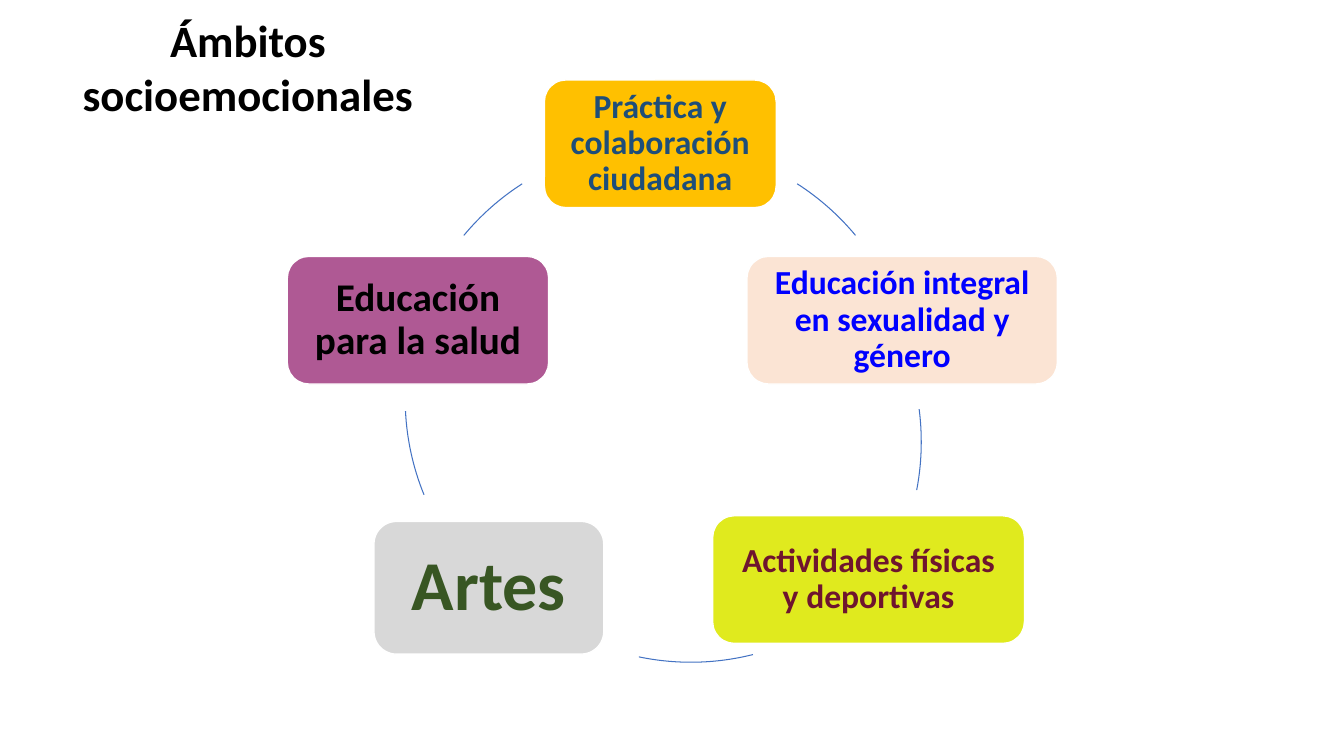
import pptx
import pptx.util
import pptx.dml.color
import pptx.enum.shapes
import pptx.enum.text

RGBColor = pptx.dml.color.RGBColor
SHAPES = pptx.enum.shapes.MSO_SHAPE
ANCHOR = pptx.enum.text.MSO_ANCHOR

WHITE = RGBColor(0xFF, 0xFF, 0xFF)
BLACK = RGBColor(0x00, 0x00, 0x00)
AMBER = RGBColor(0xFF, 0xC0, 0x00)
NAVY = RGBColor(0x1E, 0x4E, 0x79)
PEACH = RGBColor(0xFB, 0xE4, 0xD4)
BLUE = RGBColor(0x00, 0x00, 0xFF)
LIME = RGBColor(0xE0, 0xEA, 0x1E)
WINE = RGBColor(0x6E, 0x15, 0x2E)
GREY = RGBColor(0xD8, 0xD8, 0xD8)
GREEN = RGBColor(0x38, 0x56, 0x23)
MAUVE = RGBColor(0xAF, 0x59, 0x94)
ARC_BLUE = RGBColor(0x43, 0x72, 0xC3)

deck = pptx.Presentation()
deck.slide_width = pptx.util.Inches(13.33)
deck.slide_height = pptx.util.Inches(7.5)
slide = deck.slides.add_slide(deck.slide_layouts[6])

COLUMNS, ROWS = 400, 225
column = deck.slide_width / COLUMNS
row = deck.slide_height / ROWS


def grid(left, top, width, height):
    """Turn columns and rows of the slide grid into lengths."""
    return [round(left * column), round(top * row), round(width * column), round(height * row)]


def write(frame, words, size, color, side, edge, anchor, spacing):
    """Put one centred bold run in a frame; side and edge are its insets in grid units."""
    frame.word_wrap = True
    frame.vertical_anchor = anchor
    frame.margin_left = frame.margin_right = round(side * column)
    frame.margin_top = frame.margin_bottom = round(edge * row)
    paragraph = frame.paragraphs[0]
    paragraph.alignment = pptx.enum.text.PP_ALIGN.CENTER
    paragraph.line_spacing = spacing
    run = paragraph.add_run()
    run.text = words
    run.font.name = "Calibri"
    run.font.size = pptx.util.Pt(size)
    run.font.bold = True
    run.font.color.rgb = color


# Arcs of the cycle: left, top, start and end angle, clockwise from the right
RING = 151.5
arcs = [
    (120.6, 42.7, 302.7, 320.3),
    (122.7, 55.8, 352.6, 10.9),
    (129.9, 45.6, 75.9, 101.8),
    (120.6, 42.9, 157.8, 177.2),
    (120.6, 42.7, 219.7, 237.3),
]
DEGREE = 0.6  # one degree in adjustment units
for left, top, start, end in arcs:
    arc = slide.shapes.add_shape(SHAPES.ARC, *grid(left, top, RING, RING))
    arc.adjustments[0] = start * DEGREE
    arc.adjustments[1] = end * DEGREE
    arc.shadow.inherit = False
    arc.fill.background()
    arc.line.color.rgb = ARC_BLUE
    arc.line.width = pptx.util.Pt(0.75)

# Areas: words, place on the grid, fill, text colour, text size, side inset
areas = [
    ("Práctica y colaboración ciudadana", (162, 23.8, 69, 38), AMBER, NAVY, 24, 4.8),
    ("Educación integral en sexualidad y género", (222.3, 76.3, 92.4, 38), PEACH, BLUE, 24, 4.8),
    ("Actividades físicas y deportivas", (212.1, 153.5, 92.8, 38), LIME, WINE, 24, 4.8),
    ("Artes", (111.3, 155.2, 68.4, 39.5), GREY, GREEN, 50, 8.1),
    ("Educación para la salud", (85.5, 76.3, 77.8, 38), MAUVE, BLACK, 28, 5.4),
]
for words, place, fill, color, size, side in areas:
    area = slide.shapes.add_shape(SHAPES.ROUNDED_RECTANGLE, *grid(*place))
    area.adjustments[0] = 0.17
    area.shadow.inherit = False
    area.fill.solid()
    area.fill.fore_color.rgb = fill
    area.line.color.rgb = WHITE
    area.line.width = pptx.util.Pt(1)
    write(area.text_frame, words, size, color, side, 1.8, ANCHOR.MIDDLE, 0.9)

title = slide.shapes.add_textbox(*grid(8.7, 2.4, 130.2, 35.4))
write(title.text_frame, "Ámbitos socioemocionales", 32, BLACK, 3, 1.5, ANCHOR.TOP, 1.0)

deck.save("out.pptx")
